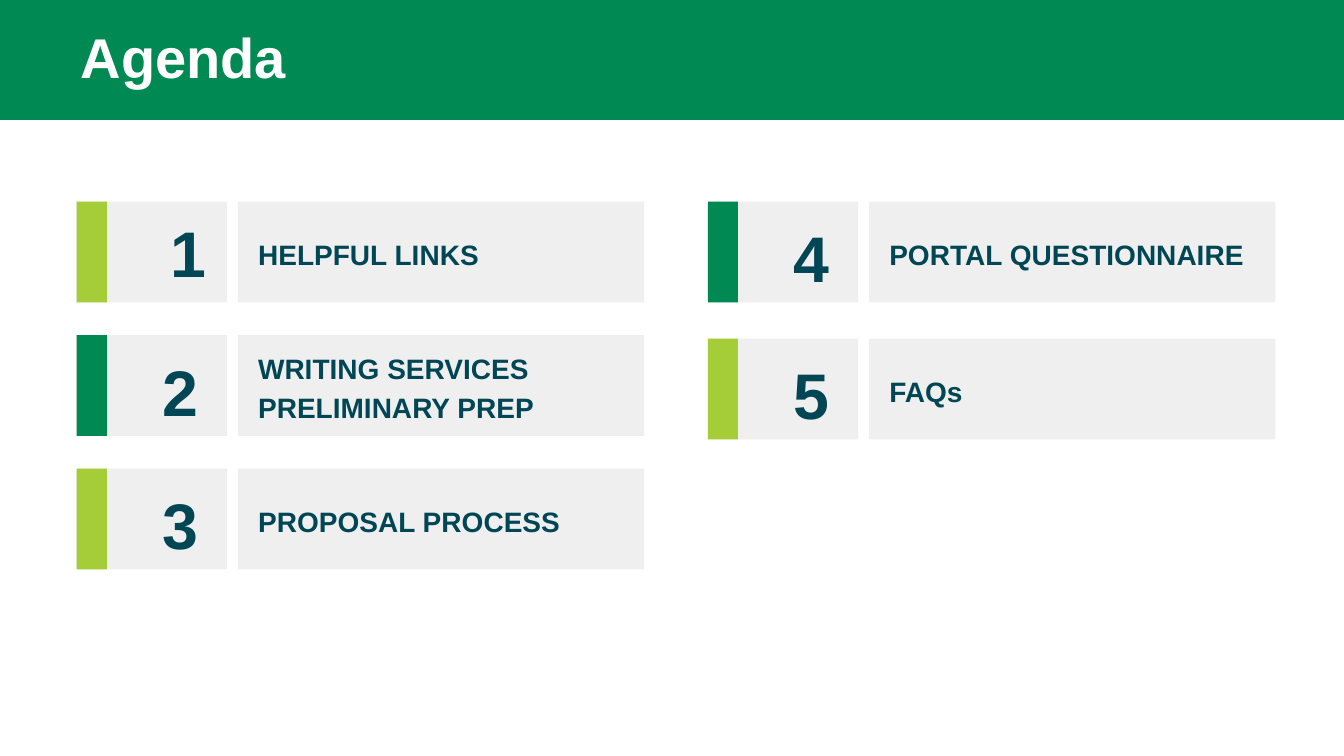
from dataclasses import dataclass

from pptx import Presentation
from pptx.dml.color import RGBColor
from pptx.enum.shapes import MSO_SHAPE
from pptx.enum.text import MSO_ANCHOR, MSO_AUTO_SIZE, PP_ALIGN
from pptx.shapes.autoshape import Shape
from pptx.slide import Slide
from pptx.util import Inches, Pt

RECTANGLE = MSO_SHAPE.RECTANGLE
MIDDLE = MSO_ANCHOR.MIDDLE
NO_AUTOFIT = MSO_AUTO_SIZE.NONE
LEFT = PP_ALIGN.LEFT

FONT = "Arial"
GREEN, LIME, GREY, TEAL, WHITE = "008953", "A5CD38", "EFEFEF", "004654", "FFFFFF"

LEFT_COLUMN, RIGHT_COLUMN = 0.76, 7.02
FIRST_ROW, ROW_HEIGHT = 2.0, 1.0
LEFT_PITCH, RIGHT_PITCH = 1.325, 1.36
STRIPE_WIDTH, NUMBER_WIDTH, LABEL_WIDTH = 0.3, 1.49, 4.03
LABEL_OFFSET = 1.6
PADDING = 0.2

Insets = tuple[float, float, float, float]
LABEL_INSETS: Insets = (PADDING,) * 4
NUMBER_INSETS: Insets = (0.85, 0.3, 0.1, PADDING)
FIRST_NUMBER_INSETS: Insets = (0.93, PADDING, 0.1, PADDING)


@dataclass(frozen=True)
class AgendaItem:
    number: str
    label: str
    left: float
    top: float
    accent: str
    number_insets: Insets = NUMBER_INSETS


ITEMS = [
    AgendaItem("1", "HELPFUL LINKS", LEFT_COLUMN, FIRST_ROW, LIME, FIRST_NUMBER_INSETS),
    AgendaItem("2", "WRITING SERVICES PRELIMINARY PREP", LEFT_COLUMN,
               FIRST_ROW + LEFT_PITCH, GREEN),
    AgendaItem("3", "PROPOSAL PROCESS", LEFT_COLUMN, FIRST_ROW + 2 * LEFT_PITCH, LIME),
    AgendaItem("4", "PORTAL QUESTIONNAIRE", RIGHT_COLUMN, FIRST_ROW, GREEN),
    AgendaItem("5", "FAQs", RIGHT_COLUMN, FIRST_ROW + RIGHT_PITCH, LIME),
]


def color(hex_value: str) -> RGBColor:
    return RGBColor.from_string(hex_value)


def add_block(page: Slide, left: float, top: float, width: float, height: float,
              fill: str) -> Shape:
    box = page.shapes.add_shape(
        RECTANGLE, Inches(left), Inches(top), Inches(width), Inches(height))
    box.shadow.inherit = False
    box.fill.solid()
    box.fill.fore_color.rgb = color(fill)
    box.line.fill.background()
    return box


def write(box: Shape, text: str, size: float, text_color: str, insets: Insets,
          line_spacing: float = 1.0) -> None:
    """Fill a box with one bold, left-aligned, vertically centred paragraph."""
    frame = box.text_frame
    frame.word_wrap = True
    frame.auto_size = NO_AUTOFIT
    frame.vertical_anchor = MIDDLE
    frame.margin_left, frame.margin_top, frame.margin_right, frame.margin_bottom = (
        Inches(inset) for inset in insets)
    para = frame.paragraphs[0]
    para.alignment = LEFT
    para.line_spacing = line_spacing
    span = para.add_run()
    span.text = text
    span.font.name = FONT
    span.font.size = Pt(size)
    span.font.bold = True
    span.font.color.rgb = color(text_color)


def add_title(page: Slide, text: str) -> None:
    """Place the title over a full-width banner."""
    title = page.shapes.title
    banner = add_block(page, 0, 0, 13.33, 1.19, GREEN)
    title.element.addprevious(banner.element)
    title.left, title.top = Inches(0.7), Inches(0)
    title.width, title.height = Inches(12), Inches(1.15)
    write(title, text, 40, WHITE, (0.1, 0.05, 0.1, 0), 0.9)


def add_item(page: Slide, item: AgendaItem) -> None:
    number = add_block(page, item.left, item.top, NUMBER_WIDTH, ROW_HEIGHT, GREY)
    write(number, item.number, 46, TEAL, item.number_insets)
    label = add_block(page, item.left + LABEL_OFFSET, item.top, LABEL_WIDTH,
                      ROW_HEIGHT, GREY)
    write(label, item.label, 20, TEAL, LABEL_INSETS, 1.15)
    add_block(page, item.left, item.top, STRIPE_WIDTH, ROW_HEIGHT, item.accent)


def main() -> None:
    deck = Presentation()
    deck.slide_width, deck.slide_height = Inches(13.33), Inches(7.5)
    page = deck.slides.add_slide(deck.slide_layouts.get_by_name("Title Only"))
    add_title(page, "Agenda")
    for item in ITEMS:
        add_item(page, item)
    deck.save("out.pptx")


if __name__ == "__main__":
    main()
